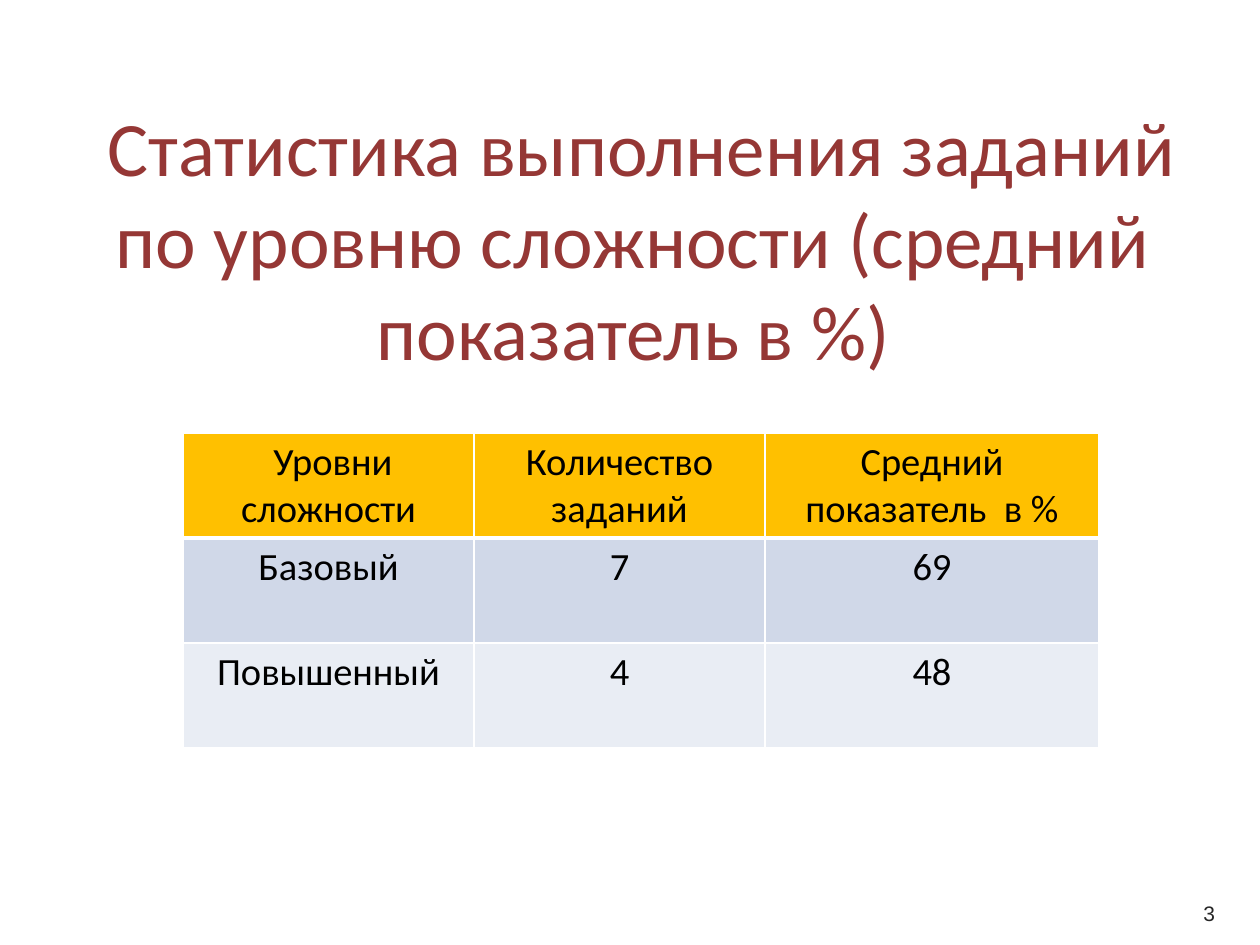
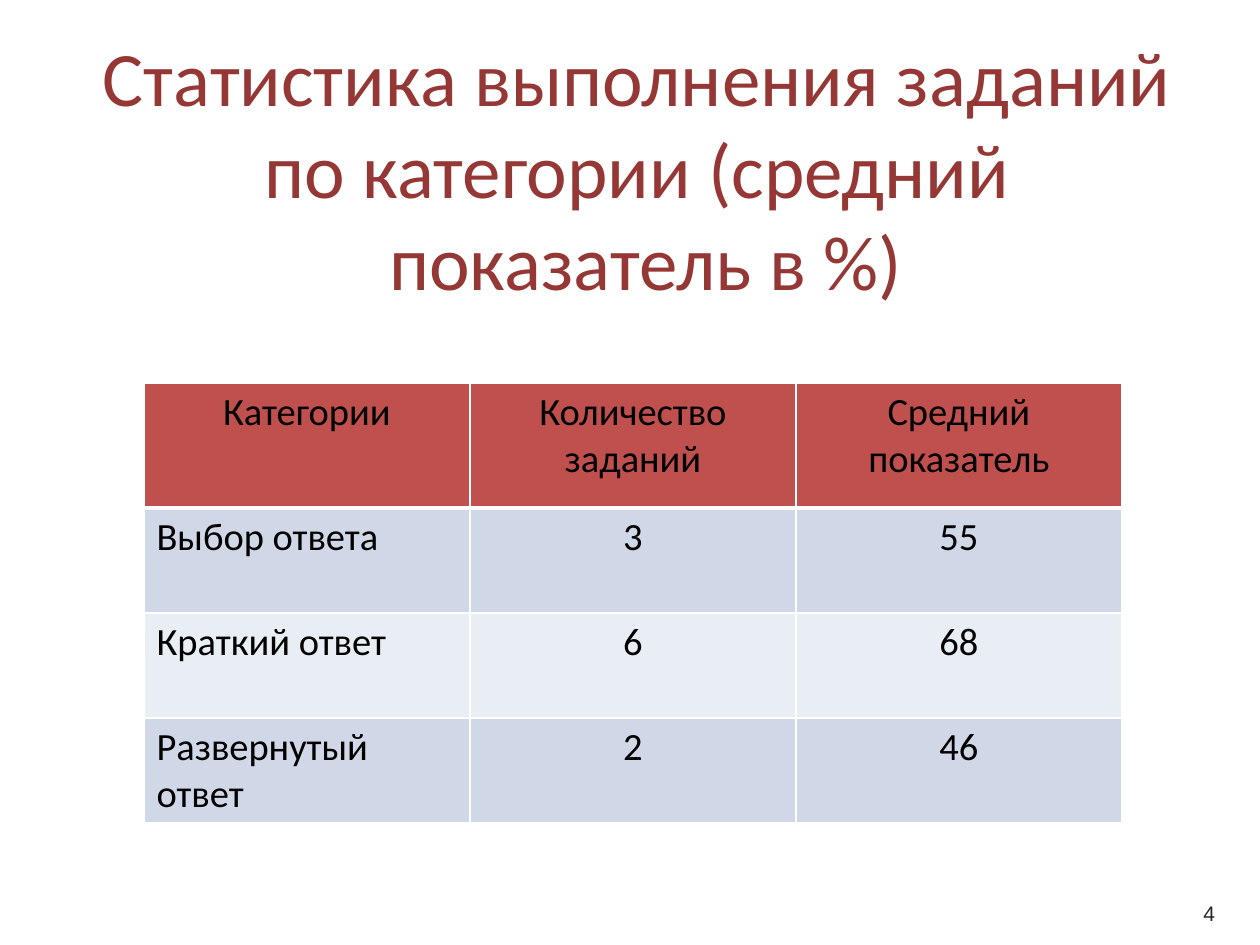
from pptx import Presentation
from pptx.dml.color import RGBColor
from pptx.enum.text import MSO_ANCHOR, PP_ALIGN
from pptx.oxml.ns import qn
from pptx.util import Emu, Pt
from lxml import etree

CENTER, LEFT = PP_ALIGN.CENTER, PP_ALIGN.LEFT
TOP, MIDDLE = MSO_ANCHOR.TOP, MSO_ANCHOR.MIDDLE
PX_PER_INCH = 126
BLANK_LAYOUT = 6

TITLE_FORMAT = {"name": "Calibri", "size": Pt(44), "bold": False}
CELL_FORMAT = {"name": "Calibri", "size": Pt(22), "bold": False}
NUMBER_FORMAT = {"name": "Arial", "size": Pt(12), "bold": False}
TITLE_COLOR, CELL_COLOR, NUMBER_COLOR = "953735", "000000", "262626"
BORDER_COLOR = "FFFFFF"
BAND_COLORS = ("D0D8E8", "E9EDF4")
ROW_HEIGHT = 105


def px(length):
    return Emu(round(length * 914400 / PX_PER_INCH))


def color(hex_string):
    return RGBColor.from_string(hex_string)


class Deck:
    def __init__(self):
        self.presentation = Presentation()
        self.presentation.slide_width = px(1260)
        self.presentation.slide_height = px(945)
        self.slide = None

    def new_slide(self):
        layout = self.presentation.slide_layouts[BLANK_LAYOUT]
        self.slide = self.presentation.slides.add_slide(layout)

    def fill_paragraph(self, paragraph, lines, formats, hex_color, align):
        paragraph.alignment = align
        for index, line in enumerate(lines):
            if index:
                paragraph.add_line_break()
            run = paragraph.add_run()
            run.text = line
            for key, value in formats.items():
                setattr(run.font, key, value)
            run.font.color.rgb = color(hex_color)

    def text(self, box, lines, formats, hex_color, align=LEFT, anchor=TOP, inset_top=6):
        frame = self.slide.shapes.add_textbox(*map(px, box)).text_frame
        frame.word_wrap = True
        frame.vertical_anchor = anchor
        frame.margin_top = px(inset_top)
        self.fill_paragraph(frame.paragraphs[0], lines, formats, hex_color, align)

    def title(self, box, lines, inset_top=6):
        self.text(box, lines, TITLE_FORMAT, TITLE_COLOR, CENTER, inset_top=inset_top)

    def page_number(self, number):
        self.text((1191, 888, 64, 50), [str(number)], NUMBER_FORMAT, NUMBER_COLOR, anchor=MIDDLE)

    def border(self, cell, is_header):
        properties = cell._tc.get_or_add_tcPr()
        for side in "LRTB":
            width = Pt(3 if is_header and side == "B" else 1)
            line = etree.SubElement(properties, qn(f"a:ln{side}"), w=str(int(width)))
            fill = etree.SubElement(line, qn("a:solidFill"))
            etree.SubElement(fill, qn("a:srgbClr"), val=BORDER_COLOR)

    def table(self, left, top, widths, header_height, header_color, rows, label_align):
        heights = [header_height] + [ROW_HEIGHT] * (len(rows) - 1)
        box = (left, top, sum(widths), sum(heights))
        table = self.slide.shapes.add_table(len(rows), len(widths), *map(px, box)).table
        for column, width in zip(table.columns, widths):
            column.width = px(width)
        for row_index, (row, height, values) in enumerate(zip(table.rows, heights, rows)):
            row.height = px(height)
            is_header = row_index == 0
            fill_color = header_color if is_header else BAND_COLORS[(row_index - 1) % 2]
            for column_index, (cell, value) in enumerate(zip(row.cells, values)):
                is_label = column_index == 0 and not is_header
                align = label_align if is_label else CENTER
                paragraph = cell.text_frame.paragraphs[0]
                self.fill_paragraph(paragraph, [value], CELL_FORMAT, CELL_COLOR, align)
                self.border(cell, is_header)
                cell.fill.solid()
                cell.fill.fore_color.rgb = color(fill_color)


def main():
    deck = Deck()

    deck.new_slide()
    deck.title(
        (59, 0, 1166, 195),
        ["Статистика выполнения заданий по уровню сложности (средний  показатель в %) "],
        inset_top=99,
    )
    difficulty_rows = [
        (" Уровни сложности", "Количество заданий", "Средний показатель  в %"),
        ("Базовый", "7", "69"),
        ("Повышенный", "4", "48"),
    ]
    deck.table(183, 433, (291, 291, 334), ROW_HEIGHT, "FFC000", difficulty_rows, CENTER)
    deck.page_number(3)

    deck.new_slide()
    deck.title(
        (63, 23, 1166, 159),
        ["Статистика выполнения заданий ", "по категории (средний  показатель в %)"],
    )
    category_rows = [
        ("Категории", "Количество заданий", "Средний показатель"),
        ("Выбор ответа", "3", "55"),
        ("Краткий ответ", "6", "68"),
        ("Развернутый ответ", "2", "46"),
    ]
    deck.table(144, 383, (326, 326, 326), 125, "C0504D", category_rows, LEFT)
    deck.page_number(4)

    deck.presentation.save("out.pptx")


if __name__ == "__main__":
    main()
